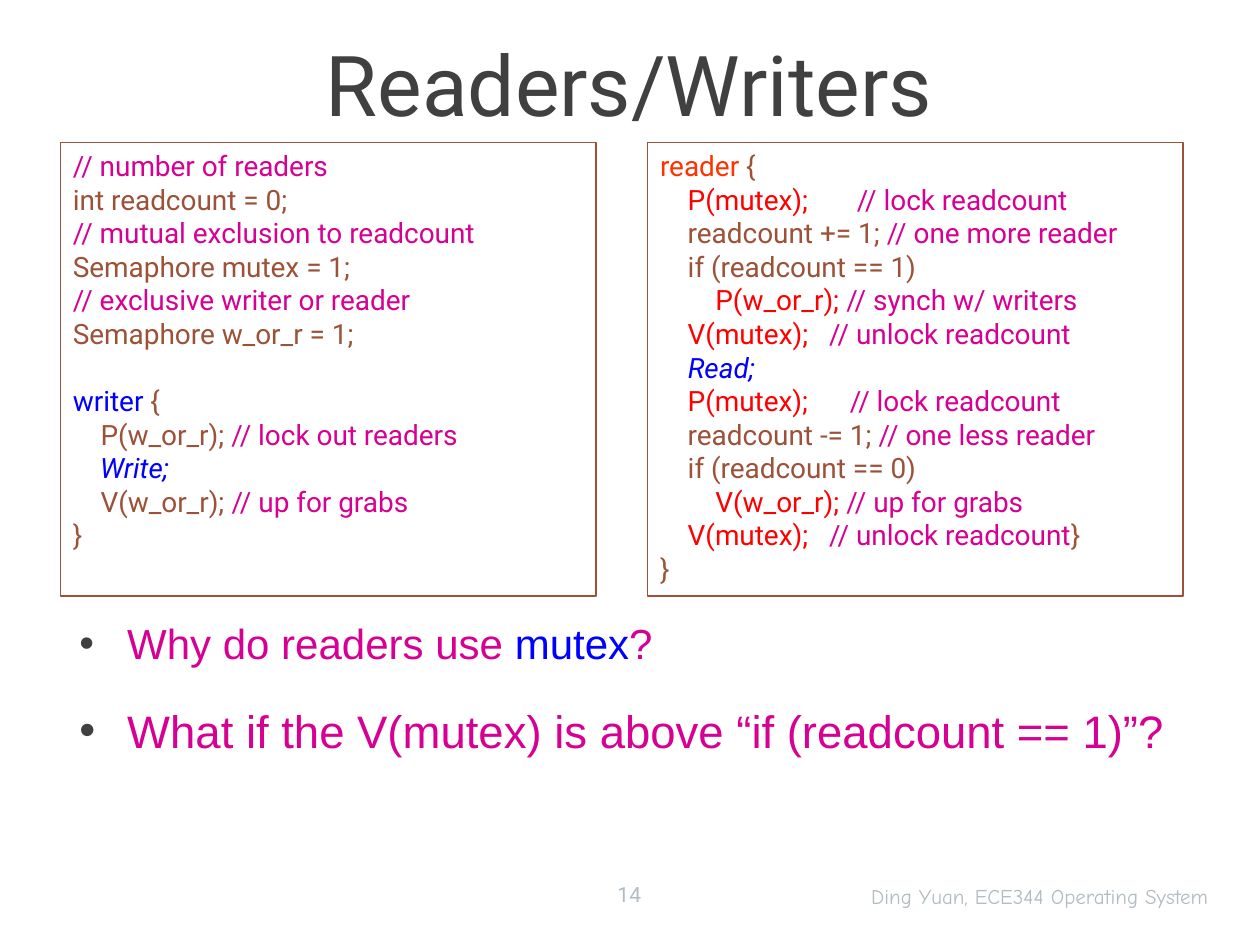
from lxml import etree
from pptx import Presentation
from pptx import util as u
from pptx.dml.color import RGBColor
from pptx.enum import shapes, text
from pptx.oxml.ns import qn

WIDTH, HEIGHT = 10, 7.5
BOX_LEFT, BOX_TOP, BOX_WIDTH, BOX_HEIGHT, BOX_STEP = 0.48, 1.13, 4.25, 3.6, 4.66
BROWN, PINK, BLUE, RED, ORANGE = "9C5238", "D60093", "0000FF", "FF0000", "FF3300"
DARK, GREY = "404040", "B0BCC1"

WRITER_CODE = [
    [("// number of readers", PINK)],
    [("int readcount = 0;", BROWN)],
    [("// mutual exclusion to readcount", PINK)],
    [("Semaphore mutex = 1;", BROWN)],
    [("// exclusive writer or reader", PINK)],
    [("Semaphore w_or_r = 1;", BROWN)],
    [],
    [("writer", BLUE), (" {", BROWN)],
    [("    P(w_or_r); ", BROWN), ("// lock out readers", PINK)],
    [("    Write;", BLUE, True)],
    [("    V(w_or_r); ", BROWN), ("// up for grabs", PINK)],
    [("}", BROWN)],
]
READER_CODE = [
    [("reader", ORANGE), (" {", BROWN)],
    [("    P(mutex);       ", RED), ("// lock readcount", PINK)],
    [("    readcount += 1; ", BROWN), ("// one more reader", PINK)],
    [("    if (readcount == 1)", BROWN)],
    [("        P(w_or_r); ", RED), ("// synch w/ writers", PINK)],
    [("    V(mutex);   ", RED), ("// unlock readcount", PINK)],
    [("    ", BLUE), ("Read;", BLUE, True)],
    [("    P(mutex);      ", RED), ("// lock readcount", PINK)],
    [("    readcount -= 1; ", BROWN), ("// one less reader", PINK)],
    [("    if (readcount == 0)", BROWN)],
    [("        V(w_or_r); ", RED), ("// up for grabs", PINK)],
    [("    V(mutex);   ", RED), ("// unlock readcount", PINK), ("}", BROWN)],
    [("}", BROWN)],
]
QUESTIONS = [
    (24, [("Why do readers use ", PINK), ("mutex", BLUE), ("?", PINK)]),
    (26, [("What if the V(mutex) is above “if (readcount == 1)”?", PINK)]),
]


def colour(value):
    return RGBColor.from_string(value)


def place(shape, left, top, width, height):
    shape.left, shape.top = u.Inches(left), u.Inches(top)
    shape.width, shape.height = u.Inches(width), u.Inches(height)


def set_font(paragraph, name, size):
    paragraph.font.name = name
    paragraph.font.size = u.Pt(size)


def add_runs(paragraph, segments):
    for words, shade, *italic in segments:
        run = paragraph.add_run()
        run.text = words
        run.font.color.rgb = colour(shade)
        if italic:
            run.font.italic = True


def paragraphs(frame, count):
    return [frame.paragraphs[0]] + [frame.add_paragraph() for _ in range(count - 1)]


def add_bullet(paragraph, indent):
    properties = paragraph._p.get_or_add_pPr()
    properties.set("marL", str(u.Inches(indent)))
    properties.set("indent", str(-u.Inches(indent)))
    bullet_colour = etree.SubElement(properties, qn("a:buClr"))
    etree.SubElement(bullet_colour, qn("a:srgbClr"), val=DARK)
    etree.SubElement(properties, qn("a:buFont"), typeface="Arial")
    etree.SubElement(properties, qn("a:buChar"), char="•")


def fill_title(title):
    place(title, 0.98, 0.11, 8.03, 1.09)
    frame = title.text_frame
    frame.auto_size = text.MSO_AUTO_SIZE.NONE
    frame.vertical_anchor = text.MSO_ANCHOR.MIDDLE
    paragraph = frame.paragraphs[0]
    paragraph.alignment = text.PP_ALIGN.CENTER
    set_font(paragraph, "Roboto", 48)
    add_runs(paragraph, [("Readers/Writers", DARK)])


def fill_questions(body):
    place(body, 0.53, 4.85, 8.85, 2)
    frame = body.text_frame
    frame.auto_size = text.MSO_AUTO_SIZE.NONE
    rows = paragraphs(frame, len(QUESTIONS))
    for index, (paragraph, (size, segments)) in enumerate(zip(rows, QUESTIONS)):
        add_bullet(paragraph, 0.38)
        paragraph.space_before = u.Pt(20 if index else 0)
        set_font(paragraph, "Arial", size)
        add_runs(paragraph, segments)


def add_code_box(slide, column, lines):
    shape = slide.shapes.add_shape(shapes.MSO_SHAPE.RECTANGLE, 0, 0, 0, 0)
    place(shape, BOX_LEFT + column * BOX_STEP, BOX_TOP, BOX_WIDTH, BOX_HEIGHT)
    shape.shadow.inherit = False
    shape.fill.background()
    shape.line.color.rgb = colour(BROWN)
    shape.line.width = u.Pt(0.75)
    frame = shape.text_frame
    frame.word_wrap = True
    frame.vertical_anchor = text.MSO_ANCHOR.TOP
    for paragraph, segments in zip(paragraphs(frame, len(lines)), lines):
        paragraph.alignment = text.PP_ALIGN.LEFT
        set_font(paragraph, "Roboto", 16)
        add_runs(paragraph, segments)


def add_footer(slide, box, words, font, alignment):
    shape = slide.shapes.add_textbox(0, 0, 0, 0)
    place(shape, *box)
    frame = shape.text_frame
    frame.word_wrap = True
    frame.vertical_anchor = text.MSO_ANCHOR.MIDDLE
    paragraph = frame.paragraphs[0]
    paragraph.alignment = alignment
    set_font(paragraph, font, 12)
    add_runs(paragraph, [(words, GREY)])


def main():
    presentation = Presentation()
    presentation.slide_width = u.Inches(WIDTH)
    presentation.slide_height = u.Inches(HEIGHT)
    slide = presentation.slides.add_slide(presentation.slide_layouts[1])
    fill_title(slide.shapes.title)
    fill_questions(slide.placeholders[1])
    for column, lines in enumerate((WRITER_CODE, READER_CODE)):
        add_code_box(slide, column, lines)
    add_footer(slide, (4.58, 6.95, 0.83, 0.3), "14", "Roboto", text.PP_ALIGN.CENTER)
    add_footer(slide, (6.52, 6.97, 3.17, 0.28), "Ding Yuan, ECE344 Operating System",
               "Comic Neue", text.PP_ALIGN.RIGHT)
    presentation.save("out.pptx")


if __name__ == "__main__":
    main()
